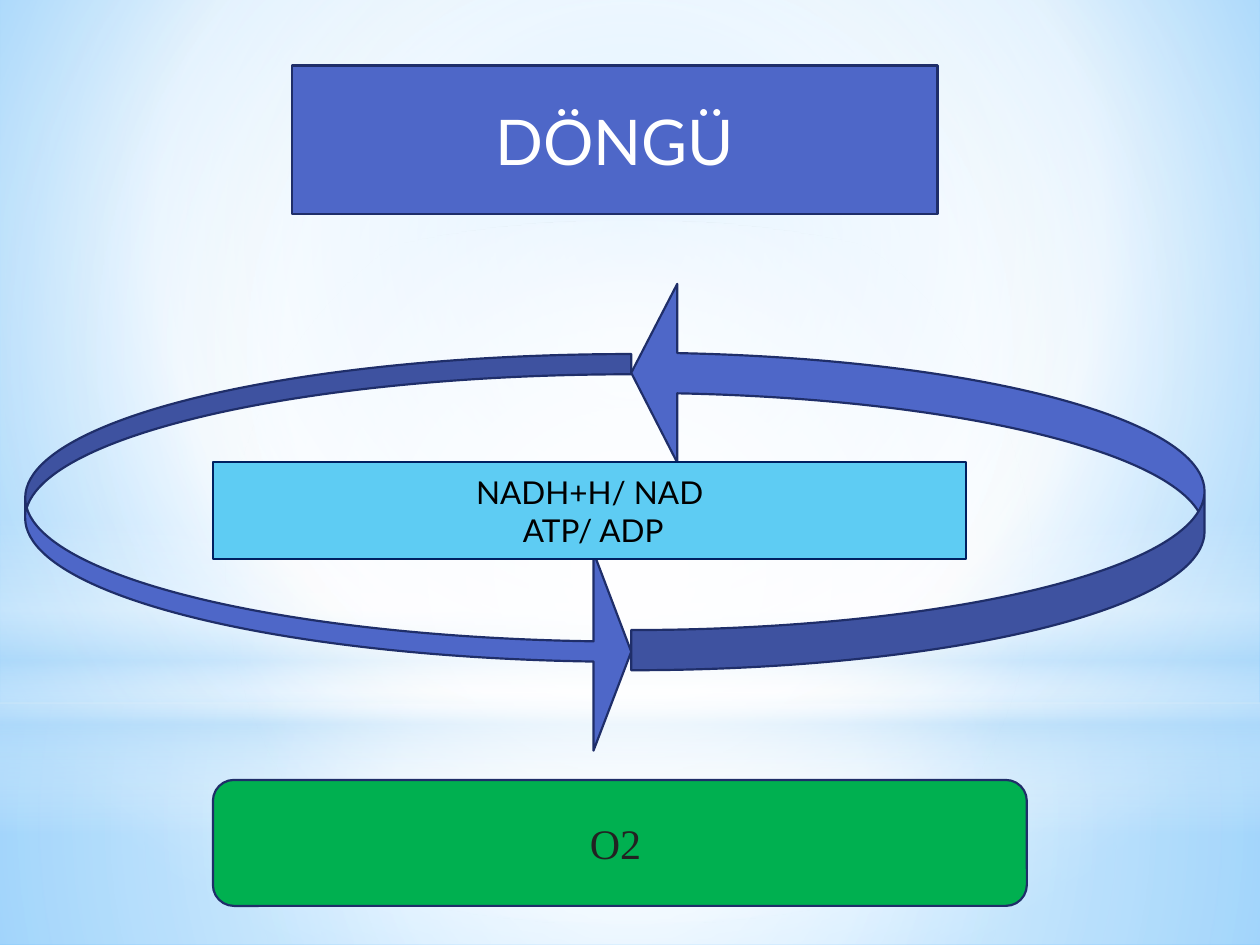
from lxml import etree
from pptx import Presentation
from pptx import util as u
from pptx.dml.color import RGBColor
from pptx.enum import shapes, text
from pptx.oxml import parse_xml
from pptx.oxml.ns import nsdecls, qn

KIND = shapes.MSO_SHAPE
INDIGO, NAVY, WHITE, HAZE = "4E67C8", "1F2E69", "FFFFFF", "B4DCFA"
CENTRE = (50, 50, 50, 50)


def color(hex_value):
    return RGBColor.from_string(hex_value)


def gradient(stops, focus=None):
    """Gradient fill from (position, colour, opacity) stops; vertical without a focus."""
    marks = "".join(
        f'<a:gs pos="{pos * 1000}"><a:srgbClr val="{hex_value}">'
        f'<a:alpha val="{opacity * 1000}"/></a:srgbClr></a:gs>'
        for pos, hex_value, opacity in stops)
    if focus:
        sides = " ".join(f'{side}="{share * 1000}"' for side, share in zip("ltrb", focus))
        direction = f'<a:path path="circle"><a:fillToRect {sides}/></a:path>'
    else:
        direction = '<a:lin ang="5400000" scaled="0"/>'
    return parse_xml(f'<a:gradFill {nsdecls("a")} rotWithShape="1">'
                     f'<a:gsLst>{marks}</a:gsLst>{direction}</a:gradFill>')


def use_gradient(holder, properties, fill):
    """Swap a plain fill for a gradient."""
    holder.fill.solid()
    properties.replace(properties.find(qn("a:solidFill")), fill)


def paint(shape, fill, line=NAVY):
    shape.fill.solid()
    shape.fill.fore_color.rgb = color(fill)
    shape.line.color.rgb = color(line)
    shape.line.width = u.Pt(1.25)


def add_block(slide, kind, box, adjust=()):
    block = slide.shapes.add_shape(kind, *map(u.Inches, box))
    block.shadow.inherit = False
    for index, value in enumerate(adjust):
        block.adjustments[index] = value
    return block


def write(shape, lines):
    """Centred lines, each a list of (words, size, font, colour) runs."""
    frame = shape.text_frame
    frame.word_wrap = True
    frame.vertical_anchor = text.MSO_ANCHOR.MIDDLE
    for index, runs in enumerate(lines):
        paragraph = frame.add_paragraph() if index else frame.paragraphs[0]
        paragraph.alignment = text.PP_ALIGN.CENTER
        for words, size, face, hex_value in runs:
            run = paragraph.add_run()
            run.text = words
            run.font.size, run.font.name = u.Pt(size), face
            run.font.color.rgb = color(hex_value)


def backdrop(slide, width, height):
    """Sky glow, horizon band and soft central light."""
    use_gradient(slide.background, slide.background.fill and
                 slide.element.find(".//" + qn("p:bgPr")),
                 gradient([(0, "9ED5FF", 100), (60, WHITE, 100), (100, "5BB9FF", 100)],
                          (20, 10, 20, 60)))
    horizon = 5.58
    layers = [
        (KIND.RECTANGLE, horizon, height - horizon,
         [(0, WHITE, 91), (37, WHITE, 76), (100, HAZE, 79)], CENTRE),
        (KIND.RECTANGLE, 0, horizon,
         [(0, WHITE, 89), (48, WHITE, 62), (100, HAZE, 79)], CENTRE),
        (KIND.RECTANGLE, 4.12, 2.5,
         [(0, WHITE, 0), (29, WHITE, 30), (45, HAZE, 40), (55, WHITE, 26),
          (65, HAZE, 60), (100, WHITE, 0)], None),
        (KIND.OVAL, 1.75, horizon, [(0, WHITE, 100), (56, WHITE, 0)], CENTRE),
    ]
    for kind, top, depth, stops, focus in layers:
        layer = add_block(slide, kind, (0, top, width, depth))
        layer.line.fill.background()
        use_gradient(layer, layer.element.spPr, gradient(stops, focus))


def cycle(slide, left, middle, right):
    """Two curved arrows that meet on the middle line."""
    lower = add_block(slide, KIND.CURVED_RIGHT_ARROW,
                      (left, 2.81, middle - left, 3.15), (0.051, 0.5, 0.095))
    upper = add_block(slide, KIND.CURVED_LEFT_ARROW,
                      (middle, 2.25, right - middle, 3.07), (0.104, 0.462, 0.119))
    upper.element.spPr.find(qn("a:xfrm")).set("flipV", "1")
    for arrow in (lower, upper):
        paint(arrow, INDIGO)


def carriers(slide, box):
    panel = add_block(slide, KIND.RECTANGLE, box)
    paint(panel, "5ECCF3", "002060")
    write(panel, [[(words, 18, "Lato", "000000")]
                  for words in ("NADH+H/ NAD", " ATP/ ADP")])


def oxygen(slide, box):
    panel = add_block(slide, KIND.ROUNDED_RECTANGLE, box)
    paint(panel, "00B050")
    write(panel, [[("O2", 24, "Times New Roman", "222222"),
                   (" ", 18, "Arial", "222222")]])


def heading(slide, box):
    """Title placeholder in an oval, in front of the backdrop."""
    title = slide.shapes.title
    title.left, title.top, title.width, title.height = map(u.Inches, box)
    oval = etree.SubElement(title.element.spPr, qn("a:prstGeom"), prst="ellipse")
    etree.SubElement(oval, qn("a:avLst"))
    paint(title, INDIGO)
    write(title, [[("DÖNGÜ", 36, "Lato", WHITE)]])
    title.element.getparent().append(title.element)


def main():
    width, height = 10, 7.5
    prs = Presentation()
    prs.slide_width, prs.slide_height = u.Inches(width), u.Inches(height)
    slide = prs.slides.add_slide(prs.slide_layouts[5])
    panel_left = 1.69
    backdrop(slide, width, height)
    cycle(slide, 0.2, 5.01, 9.56)
    carriers(slide, (panel_left, 3.67, 5.98, 0.77))
    oxygen(slide, (panel_left, 6.19, 6.46, 1))
    heading(slide, (2.32, 0.52, 5.12, 1.18))
    prs.save("out.pptx")


if __name__ == "__main__":
    main()
